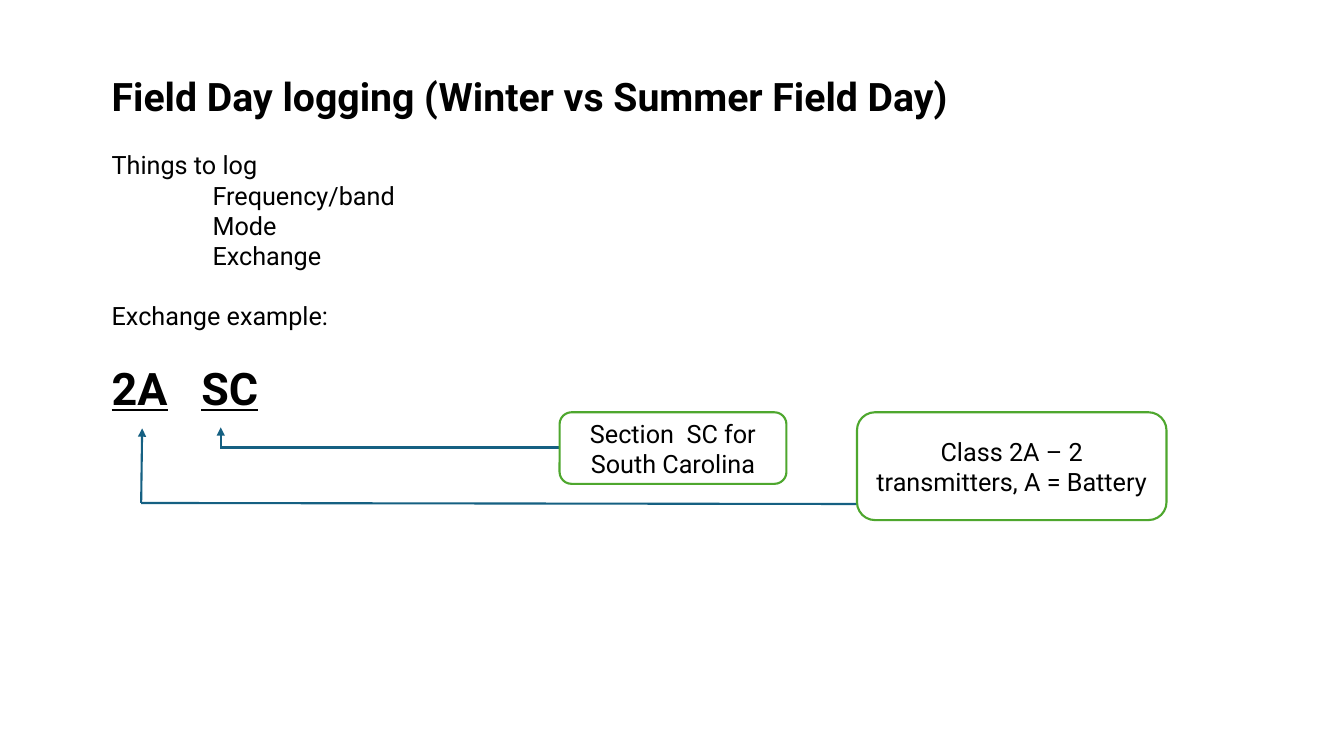
import dataclasses

import pptx
import pptx.dml.color
import pptx.enum.shapes
import pptx.enum.text
import pptx.oxml
import pptx.oxml.ns
import pptx.presentation
import pptx.slide
import pptx.util

Inches = pptx.util.Inches
Pt = pptx.util.Pt
RGBColor = pptx.dml.color.RGBColor

BLACK = RGBColor(0x00, 0x00, 0x00)
WHITE = RGBColor(0xFF, 0xFF, 0xFF)
GREEN = RGBColor(0x4E, 0xA7, 0x2E)
BLUE = RGBColor(0x15, 0x60, 0x82)
FONT = "Roboto"
GAP = 21.5


@dataclasses.dataclass(frozen=True)
class Span:
    text: str
    size: float = 18
    bold: bool = False
    under: bool = False


@dataclasses.dataclass(frozen=True)
class Para:
    spans: tuple[Span, ...]
    before: float = 0
    indent: float = 0
    tab: float = 0


@dataclasses.dataclass(frozen=True)
class Label:
    text: str
    left: float
    width: float
    height: float
    top: float = 4.09


@dataclasses.dataclass(frozen=True)
class Line:
    start: tuple[float, float]
    end: tuple[float, float]
    arrow: bool = False


PARAS = (
    Para((Span("Field Day logging (Winter vs Summer Field Day)", 28, True),)),
    Para((Span("Things to log"),), before=GAP),
    Para((Span("Frequency/band"),), indent=1),
    Para((Span("Mode"),), indent=1),
    Para((Span("Exchange"),), indent=1),
    Para((Span("Exchange example:"),), before=GAP),
    Para(
        (Span("2A", 32, True, True), Span("\t", 32, True), Span("SC", 32, True, True)),
        before=GAP,
        tab=0.89,
    ),
)

LABELS = (
    Label("Section  SC for South Carolina", 5.55, 2.25, 0.71),
    Label("Class 2A – 2 transmitters, A = Battery", 8.5, 3.07, 1.07),
)

LINES = (
    Line((5.55, 4.44), (2.19, 4.44)),
    Line((2.19, 4.45), (2.19, 4.24), arrow=True),
    Line((8.5, 5), (1.4, 4.99)),
    Line((1.4, 4.99), (1.41, 4.25), arrow=True),
)


def add_run(para, span: Span) -> None:
    run = para.add_run()
    run.text = span.text
    font = run.font
    font.name = FONT
    font.size = Pt(span.size)
    font.bold = span.bold
    font.underline = span.under
    font.color.rgb = BLACK


def add_tab(para, pos: float) -> None:
    """Put a left tab stop at pos inches from the text edge."""
    props = para._p.get_or_add_pPr()
    stops = pptx.oxml.ns.qn("a:tabLst")
    stop = props.makeelement(pptx.oxml.ns.qn("a:tab"), {"pos": str(Inches(pos)), "algn": "l"})
    group = props.makeelement(stops, {})
    group.append(stop)
    props.append(group)


def add_body(slide: pptx.slide.Slide) -> None:
    box = slide.shapes.add_textbox(Inches(1.01), Inches(0.67), Inches(10.67), Inches(6.8))
    frame = box.text_frame
    frame.word_wrap = True
    for i, item in enumerate(PARAS):
        para = frame.add_paragraph() if i else frame.paragraphs[0]
        para.space_before = Pt(item.before)
        if item.indent:
            props = para._p.get_or_add_pPr()
            props.set("marL", str(Inches(item.indent)))
            props.set("indent", "0")
        if item.tab:
            add_tab(para, item.tab)
        for span in item.spans:
            add_run(para, span)


def add_label(slide: pptx.slide.Slide, label: Label) -> None:
    shape = slide.shapes.add_shape(
        pptx.enum.shapes.MSO_SHAPE.ROUNDED_RECTANGLE,
        Inches(label.left), Inches(label.top), Inches(label.width), Inches(label.height),
    )
    shape.shadow.inherit = False
    shape.fill.solid()
    shape.fill.fore_color.rgb = WHITE
    shape.line.color.rgb = GREEN
    shape.line.width = Pt(1.5)
    frame = shape.text_frame
    frame.word_wrap = True
    frame.vertical_anchor = pptx.enum.text.MSO_ANCHOR.MIDDLE
    para = frame.paragraphs[0]
    para.alignment = pptx.enum.text.PP_ALIGN.CENTER
    add_run(para, Span(label.text))


def add_line(slide: pptx.slide.Slide, line: Line) -> None:
    shape = slide.shapes.add_connector(
        pptx.enum.shapes.MSO_CONNECTOR.STRAIGHT,
        *(Inches(value) for value in line.start + line.end),
    )
    shape.line.color.rgb = BLUE
    shape.line.width = Pt(1.5)
    if line.arrow:
        stroke = shape.line._get_or_add_ln()
        stroke.append(stroke.makeelement(pptx.oxml.ns.qn("a:tailEnd"), {"type": "triangle"}))
    props = shape._element.spPr
    props.append(props.makeelement(pptx.oxml.ns.qn("a:effectLst"), {}))


def main() -> None:
    deck: pptx.presentation.Presentation = pptx.Presentation()
    deck.slide_width = Inches(13.33)
    deck.slide_height = Inches(7.5)
    slide = deck.slides.add_slide(deck.slide_layouts[6])
    add_body(slide)
    for line in LINES:
        add_line(slide, line)
    for label in LABELS:
        add_label(slide, label)
    deck.save("out.pptx")


if __name__ == "__main__":
    main()
